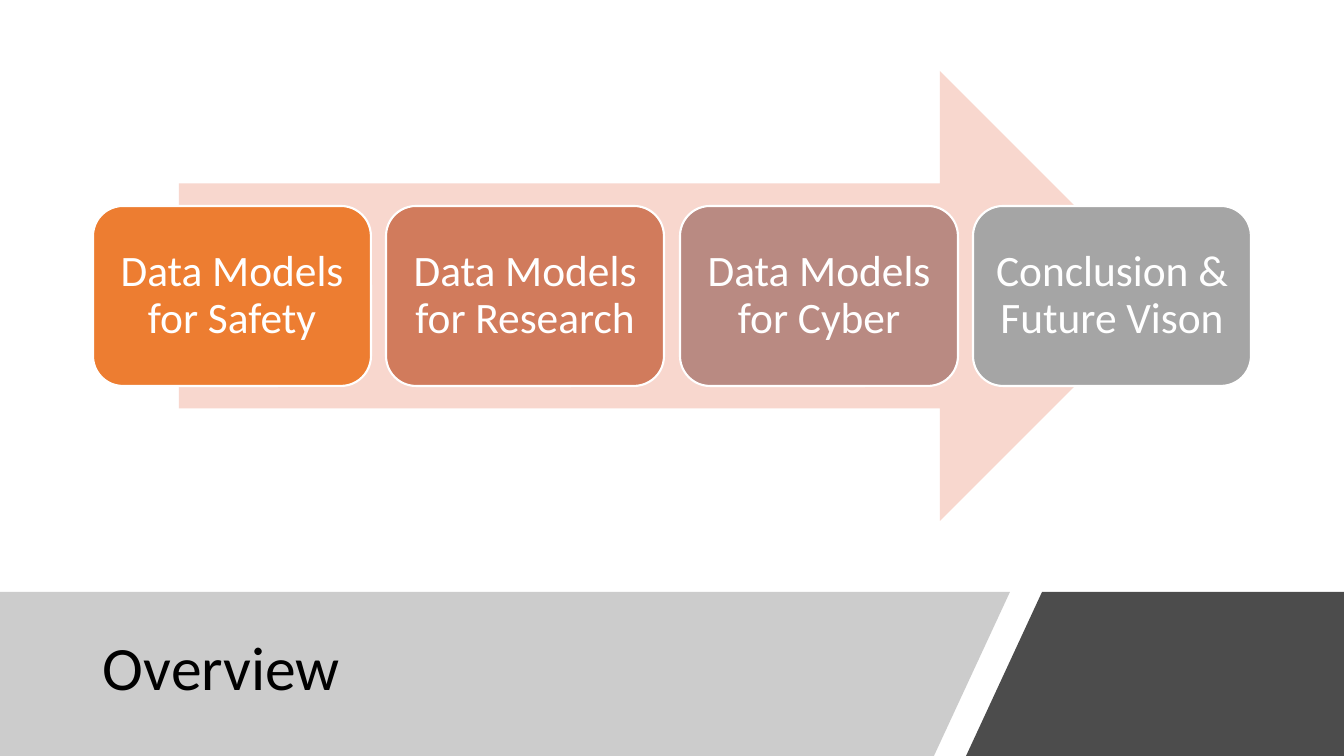
from dataclasses import dataclass

from lxml.etree import SubElement
from pptx import Presentation
from pptx.dml.color import RGBColor
from pptx.enum.shapes import MSO_SHAPE as Preset
from pptx.enum.text import MSO_ANCHOR as Anchor, PP_ALIGN as Align
from pptx.oxml.ns import qn
from pptx.shapes.autoshape import Shape
from pptx.slide import Slide
from pptx.util import Emu, Pt

EMU_PER_PX = 914400 / 100.8


@dataclass(frozen=True)
class Theme:
    font: str = "Calibri"
    title_size: int = 44
    stage_size: int = 31
    outline_width: float = 1.5
    white: str = "FFFFFF"
    black: str = "000000"
    band: str = "808080"
    arrow: str = "F8D7CE"


@dataclass(frozen=True)
class Box:
    left: int
    top: int
    width: int
    height: int

    def emu(self) -> tuple[Emu, Emu, Emu, Emu]:
        return px(self.left), px(self.top), px(self.width), px(self.height)


@dataclass(frozen=True)
class Stage:
    label: str
    color: str


@dataclass(frozen=True)
class FooterPanel:
    points: list[tuple[int, int]]
    color: str
    opacity: int


THEME = Theme()
SLIDE_WIDTH, SLIDE_HEIGHT = 1344, 756
FOOTER_TOP = 592
TITLE_BOX = Box(93, 610, 851, 121)
ARROW_BOX = Box(179, 71, 986, 450)
FIRST_STAGE = Box(93, 206, 278, 180)
LAST_STAGE_LEFT = 973
STAGE_INSET = 13
TITLE_INSET = 10

STAGES = [
    Stage("Data Models for Safety", "ED7D31"),
    Stage("Data Models for Research", "D17B5C"),
    Stage("Data Models for Cyber", "B98A82"),
    Stage("Conclusion & Future Vison", "A5A5A5"),
]

FOOTER_PANELS = [
    FooterPanel(
        [(0, FOOTER_TOP), (1010, FOOTER_TOP), (934, SLIDE_HEIGHT), (0, SLIDE_HEIGHT)],
        THEME.band, 40,
    ),
    FooterPanel(
        [(1042, FOOTER_TOP), (SLIDE_WIDTH, FOOTER_TOP),
         (SLIDE_WIDTH, SLIDE_HEIGHT), (966, SLIDE_HEIGHT)],
        THEME.black, 70,
    ),
]


def px(length: int) -> Emu:
    return Emu(round(length * EMU_PER_PX))


def paint(shape: Shape, color: str, *, opacity: int = 100, outline: str | None = None) -> None:
    shape.shadow.inherit = False
    shape.fill.solid()
    shape.fill.fore_color.rgb = RGBColor.from_string(color)
    if opacity < 100:
        color_element = shape.fill._xPr.find(qn("a:solidFill"))[0]
        SubElement(color_element, qn("a:alpha"), val=str(opacity * 1000))
    if outline is None:
        shape.line.fill.background()
    else:
        shape.line.color.rgb = RGBColor.from_string(outline)
        shape.line.width = Pt(THEME.outline_width)


def write(shape: Shape, text: str, *, size: int, color: str, align: Align, inset: int) -> None:
    frame = shape.text_frame
    frame.word_wrap = True
    frame.vertical_anchor = Anchor.MIDDLE
    frame.margin_left = frame.margin_right = px(inset)
    frame.margin_top = frame.margin_bottom = px(inset)
    paragraph = frame.paragraphs[0]
    paragraph.alignment = align
    paragraph.line_spacing = 0.9
    run = paragraph.add_run()
    run.text = text
    run.font.name = THEME.font
    run.font.size = Pt(size)
    run.font.color.rgb = RGBColor.from_string(color)


def draw_footer_panel(slide: Slide, panel: FooterPanel) -> None:
    start, *rest = panel.points
    builder = slide.shapes.build_freeform(*start, scale=EMU_PER_PX)
    builder.add_line_segments(rest, close=True)
    paint(builder.convert_to_shape(), panel.color, opacity=panel.opacity)


def draw_title(slide: Slide, text: str) -> None:
    title = slide.shapes.add_textbox(*TITLE_BOX.emu())
    write(title, text, size=THEME.title_size, color=THEME.black,
          align=Align.LEFT, inset=TITLE_INSET)


def draw_arrow(slide: Slide) -> None:
    arrow = slide.shapes.add_shape(Preset.RIGHT_ARROW, *ARROW_BOX.emu())
    paint(arrow, THEME.arrow)


def draw_stage(slide: Slide, stage: Stage, index: int) -> None:
    span = LAST_STAGE_LEFT - FIRST_STAGE.left
    left = FIRST_STAGE.left + round(index * span / (len(STAGES) - 1))
    box = Box(left, FIRST_STAGE.top, FIRST_STAGE.width, FIRST_STAGE.height)
    card = slide.shapes.add_shape(Preset.ROUNDED_RECTANGLE, *box.emu())
    paint(card, stage.color, outline=THEME.white)
    write(card, stage.label, size=THEME.stage_size, color=THEME.white,
          align=Align.CENTER, inset=STAGE_INSET)


def main() -> None:
    presentation = Presentation()
    presentation.slide_width = px(SLIDE_WIDTH)
    presentation.slide_height = px(SLIDE_HEIGHT)
    slide = presentation.slides.add_slide(presentation.slide_layouts[6])
    for panel in FOOTER_PANELS:
        draw_footer_panel(slide, panel)
    draw_title(slide, "Overview")
    draw_arrow(slide)
    for index, stage in enumerate(STAGES):
        draw_stage(slide, stage, index)
    presentation.save("out.pptx")


if __name__ == "__main__":
    main()
